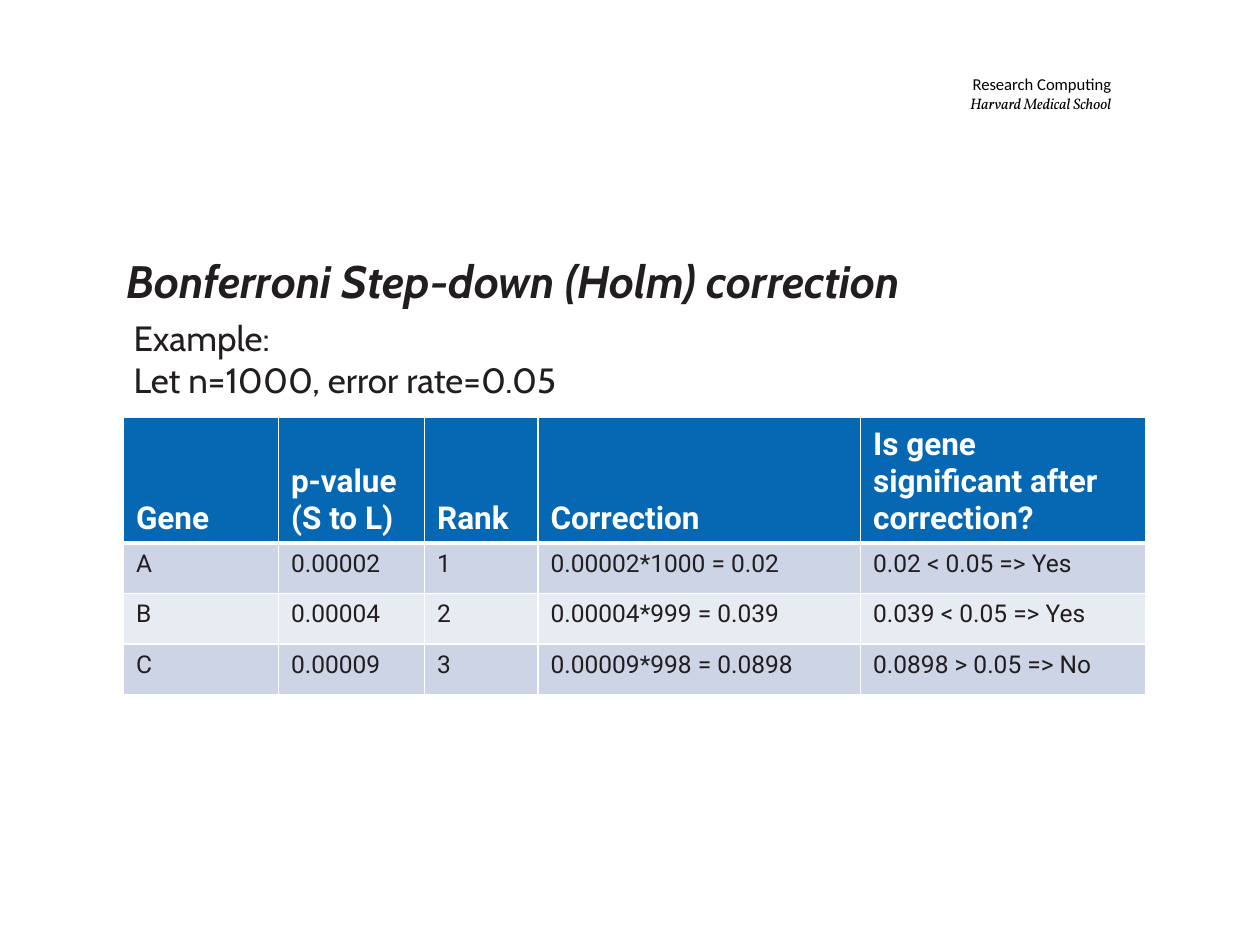
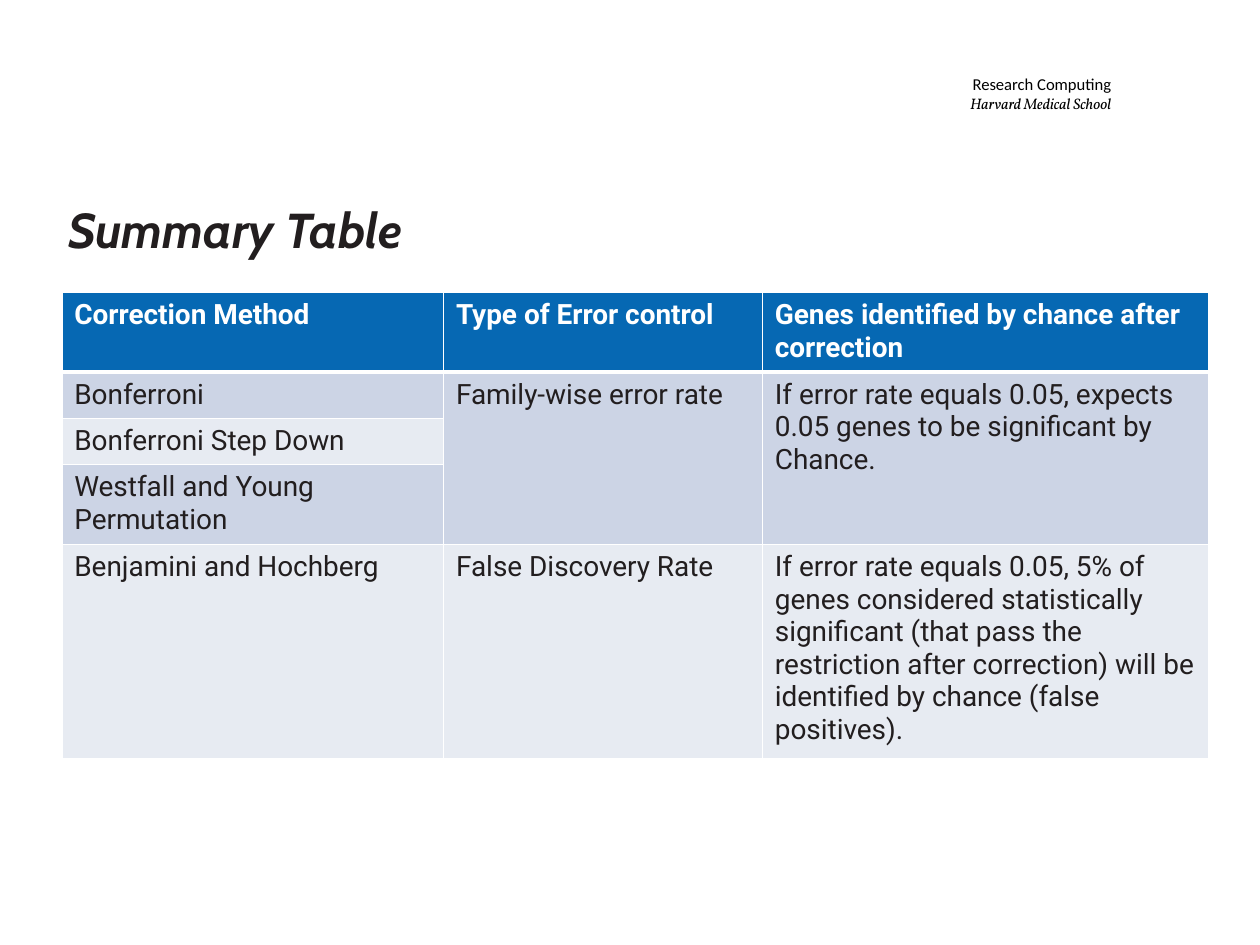
from dataclasses import dataclass

import pptx
import pptx.dml.color
import pptx.enum.text
import pptx.oxml
import pptx.oxml.ns
import pptx.util

Inches = pptx.util.Inches
Pt = pptx.util.Pt
RGBColor = pptx.dml.color.RGBColor
ANCHOR = pptx.enum.text.MSO_ANCHOR
ALIGN = pptx.enum.text.PP_ALIGN

BLUE = RGBColor(0x06, 0x68, 0xB3)
BAND_DARK = RGBColor(0xCC, 0xD4, 0xE5)
BAND_LIGHT = RGBColor(0xE7, 0xEB, 0xF2)
INK = RGBColor(0x22, 0x1E, 0x1F)
BLACK = RGBColor(0, 0, 0)
WHITE = RGBColor(0xFF, 0xFF, 0xFF)

TITLE_AND_CONTENT, TITLE_ONLY = 1, 5


@dataclass
class Box:
    left: float
    top: float
    width: float
    height: float


@dataclass
class Style:
    font: str
    size: float
    color: RGBColor = INK
    bold: bool = False
    italic: bool = False


@dataclass
class Grid:
    left: float
    top: float
    widths: list[float]
    heights: list[float]
    rows: list[list[str]]
    head: Style
    body: Style
    head_anchor: ANCHOR


def format_paragraph(p, style: Style, align: ALIGN = ALIGN.LEFT) -> None:
    p.alignment = align
    for r in p.runs:
        r.font.name = style.font
        r.font.size = Pt(style.size)
        r.font.color.rgb = style.color
        r.font.bold = style.bold
        r.font.italic = style.italic


def place(sp, box: Box) -> None:
    sp.left, sp.top = Inches(box.left), Inches(box.top)
    sp.width, sp.height = Inches(box.width), Inches(box.height)


def fill_placeholder(sp, box: Box, text: str, style: Style) -> None:
    place(sp, box)
    tf = sp.text_frame
    tf.text = text
    tf.word_wrap = True
    tf.auto_size = pptx.enum.text.MSO_AUTO_SIZE.NONE
    tf.vertical_anchor = ANCHOR.TOP
    for p in tf.paragraphs:
        pPr = p._p.get_or_add_pPr()
        pPr.set("marL", "0")
        pPr.set("indent", "0")
        pPr.append(pptx.oxml.parse_xml(f'<a:buNone {pptx.oxml.ns.nsdecls("a")}/>'))
        p.space_before = Pt(0)
        format_paragraph(p, style)


def add_header(slide) -> None:
    sp = slide.shapes.add_textbox(Inches(6.37), Inches(0.41), Inches(2.53), Inches(0.66))
    tf = sp.text_frame
    tf.word_wrap = True
    tf.vertical_anchor = ANCHOR.MIDDLE
    tf.margin_left = tf.margin_right = Inches(0.08)
    tf.margin_top = tf.margin_bottom = Inches(0.04)
    tf.text = "Research Computing\nHarvard Medical School"
    styles = [Style("Calibri", 9.5, BLACK), Style("Vollkorn", 8.7, BLACK, italic=True)]
    for p, style in zip(tf.paragraphs, styles):
        format_paragraph(p, style, ALIGN.RIGHT)


def add_slide(prs, layout: int, title: str, box: Box, size: float):
    slide = prs.slides.add_slide(prs.slide_layouts[layout])
    add_header(slide)
    fill_placeholder(slide.shapes.title, box, title, Style("Cabin", size, bold=True, italic=True))
    return slide


def set_borders(cell, row: int) -> None:
    points = {"lnL": 1, "lnR": 1, "lnT": 3 if row == 1 else 1, "lnB": 3 if row == 0 else 1}
    tcPr = cell._tc.get_or_add_tcPr()
    for i, (tag, width) in enumerate(points.items()):
        tcPr.insert(i, pptx.oxml.parse_xml(
            f'<a:{tag} {pptx.oxml.ns.nsdecls("a")} w="{Pt(width)}">'
            f'<a:solidFill><a:srgbClr val="{WHITE}"/></a:solidFill></a:{tag}>'))


def add_grid(slide, grid: Grid):
    frame = slide.shapes.add_table(
        len(grid.heights), len(grid.widths), Inches(grid.left), Inches(grid.top),
        Inches(sum(grid.widths)), Inches(sum(grid.heights)))
    table = frame.table
    table.horz_banding = False
    for column, width in zip(table.columns, grid.widths):
        column.width = Inches(width)
    for i, (height, texts) in enumerate(zip(grid.heights, grid.rows)):
        table.rows[i].height = Inches(height)
        band = BLUE if i == 0 else BAND_DARK if i % 2 else BAND_LIGHT
        for cell, text in zip(table.rows[i].cells, texts):
            cell.text = text
            cell.vertical_anchor = ANCHOR.TOP if i else grid.head_anchor
            cell.fill.solid()
            cell.fill.fore_color.rgb = band
            set_borders(cell, i)
            for p in cell.text_frame.paragraphs:
                format_paragraph(p, grid.body if i else grid.head)
    return table


def build_holm_slide(prs) -> None:
    slide = add_slide(prs, TITLE_AND_CONTENT, "Bonferroni Step-down (Holm) correction",
                      Box(0.9, 1.96, 8.21, 0.54), 26)
    fill_placeholder(slide.placeholders[1], Box(0.96, 2.46, 4.63, 0.77),
                     "Example:\nLet n=1000, error rate=0.05", Style("Cabin", 20))
    add_grid(slide, Grid(
        0.98, 3.31, [1.23, 1.16, 0.9, 2.56, 2.26], [0.98, 0.4, 0.4, 0.4],
        [["Gene", "p-value (S to L)", "Rank", "Correction", "Is gene significant after correction?"],
         ["A", "0.00002", "1", "0.00002*1000 = 0.02", "0.02 < 0.05 => Yes"],
         ["B", "0.00004", "2", "0.00004*999 = 0.039", "0.039 < 0.05 => Yes"],
         ["C", "0.00009", "3", "0.00009*998 = 0.0898", "0.0898 > 0.05 => No"]],
        Style("Roboto", 18, WHITE, bold=True), Style("Roboto", 14), ANCHOR.BOTTOM))


def build_summary_slide(prs) -> None:
    slide = add_slide(prs, TITLE_ONLY, "Summary Table", Box(0.44, 1.53, 7.37, 0.57), 28)
    table = add_grid(slide, Grid(
        0.49, 2.32, [3.03, 2.53, 3.54], [0.62, 0.35, 0.36, 0.62, 1.65],
        [["Correction Method", "Type of Error control", "Genes identified by chance after correction"],
         ["Bonferroni", "Family-wise error rate",
          "If error rate equals 0.05, expects\n0.05 genes to be significant by\nChance."],
         ["Bonferroni Step Down", "", ""],
         ["Westfall and Young\nPermutation", "", ""],
         ["Benjamini and Hochberg", "False Discovery Rate",
          "If error rate equals 0.05, 5% of\ngenes considered statistically\n"
          "significant (that pass the\n"
          "restriction after correction) will be identified by chance (false\npositives)."]],
        Style("Roboto", 16, WHITE, bold=True), Style("Roboto", 16), ANCHOR.TOP))
    for column in (1, 2):
        table.cell(1, column).merge(table.cell(3, column))


def main() -> None:
    prs = pptx.Presentation()
    prs.slide_width, prs.slide_height = Inches(10), Inches(7.5)
    build_holm_slide(prs)
    build_summary_slide(prs)
    prs.save("out.pptx")


if __name__ == "__main__":
    main()
